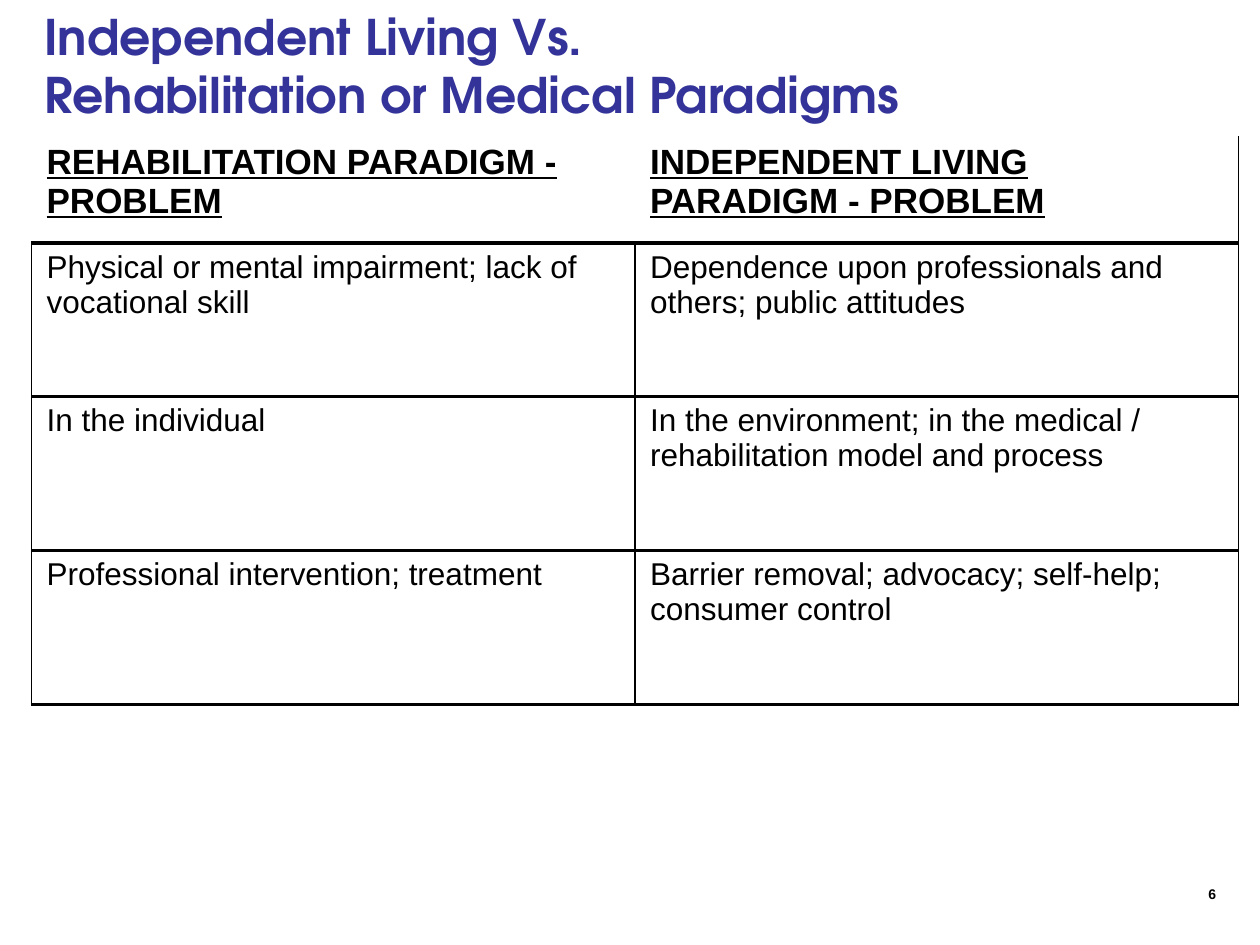
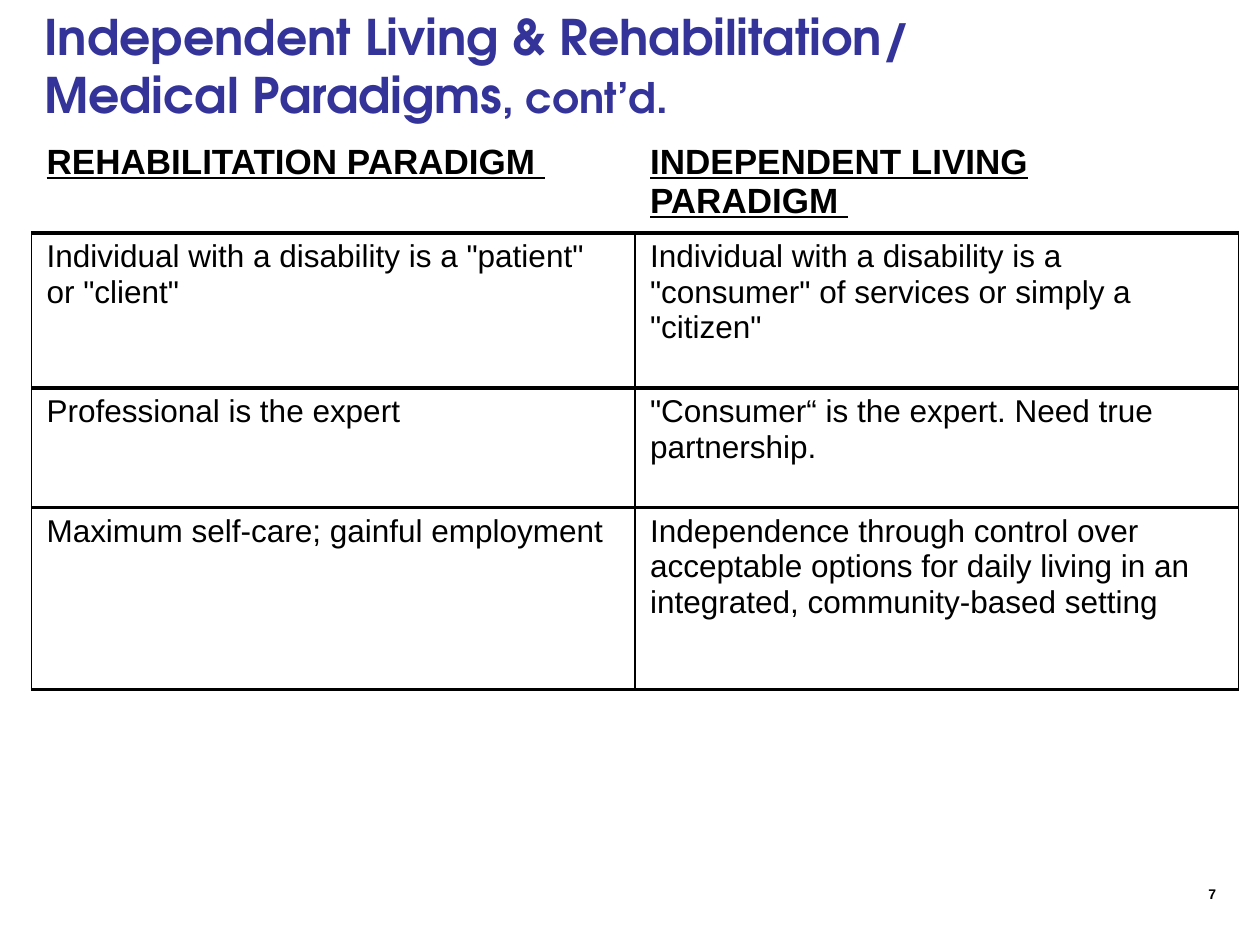
from lxml import etree
from pptx import Presentation, util as u
from pptx.dml.color import RGBColor
from pptx.enum import text
from pptx.oxml.ns import qn

# Content: title runs as (text, theme size), then header row and body rows
SLIDES = [
    dict(number="6",
         title=[("Independent Living Vs. \vRehabilitation or Medical Paradigms", "title")],
         heights=[0.85, 1.22, 1.22, 1.22], header_right=True,
         rows=[("REHABILITATION PARADIGM - PROBLEM", "INDEPENDENT LIVING PARADIGM - PROBLEM"),
               ("Physical or mental impairment; lack of vocational skill",
                "Dependence upon professionals and others; public attitudes"),
               ("In the individual",
                "In the environment; in the medical / rehabilitation model and process"),
               ("Professional intervention; treatment",
                "Barrier removal; advocacy; self-help; consumer control")]),
    dict(number="7",
         title=[("Independent Living & Rehabilitation/ Medical Paradigms", "title"),
                (", cont’d.", "subtitle")],
         heights=[0.77, 1.23, 0.95, 1.44], header_right=False,
         rows=[("REHABILITATION PARADIGM ", "INDEPENDENT LIVING PARADIGM "),
               ('Individual with a disability is a "patient" or "client"',
                'Individual with a disability is a "consumer" of services or simply a "citizen"'),
               ("Professional is the expert",
                '"Consumer“ is the expert. Need true partnership.'),
               ("Maximum self-care; gainful employment",
                "Independence through control over acceptable options for daily living "
                "in an integrated, community-based setting")]),
]

# Theme: one font format per text role, and line widths in points
BLUE, BLACK = RGBColor(0x33, 0x33, 0x99), RGBColor(0, 0, 0)


def style(size, bold, color=BLACK, name="Arial", underline=False):
    return dict(size=u.Pt(size), bold=bold, name=name, underline=underline, color=color)


THEME = dict(
    title=style(28, True, BLUE, "TeX Gyre Adventor"),
    subtitle=style(24, True, BLUE, "TeX Gyre Adventor"),
    header=style(20, True, underline=True),
    body=style(18, False),
    number=style(8, True),
)
THIN, RULE, HEADER_RULE = 0.75, 2, 2.25

# Layout in inches
WIDTH, HEIGHT = 10, 7.5
LEFT = 0.25
TITLE_BOX = (LEFT, 0.08, 8.42, 0.87)
TABLE_TOP, TABLE_WIDTH = 1.08, 9.58
NUMBER_BOX = (9.08, 6.98, 0.67, 0.27)
CELL_FORMAT = dict(margin_left=u.Inches(0.12), margin_right=u.Inches(0.12),
                   margin_top=u.Inches(0.05), margin_bottom=u.Inches(0.05))
NO_TABLE_STYLE = "{2D5ABB26-0587-4C30-8999-92F81FD0307C}"


def apply(target, values):
    for name, value in values.items():
        setattr(target, name, value)


def add_run(p, words, role):
    values = dict(THEME[role])
    for i, line in enumerate(words.split("\v")):
        if i:
            p.add_line_break()
        r = p.add_run()
        r.text = line
        r.font.color.rgb = values["color"]
        apply(r.font, {k: v for k, v in values.items() if k != "color"})


def add_border(cell, side, width):
    ln = etree.SubElement(cell._tc.get_or_add_tcPr(), qn("a:ln" + side), w=str(u.Pt(width)))
    if width:
        fill = etree.SubElement(ln, qn("a:solidFill"))
        etree.SubElement(fill, qn("a:srgbClr"), val=str(BLACK))
    else:
        etree.SubElement(ln, qn("a:noFill"))


def cell_borders(row, col, header_right):
    if row == 0:
        return dict(L=0, R=THIN if header_right and col == 1 else 0, T=0, B=HEADER_RULE)
    return dict(L=THIN, R=THIN, T=HEADER_RULE if row == 1 else RULE, B=RULE)


def add_title(s, runs):
    title = s.shapes.title
    apply(title, dict(zip(("left", "top", "width", "height"), map(u.Inches, TITLE_BOX))))
    tf = title.text_frame
    apply(tf, dict(word_wrap=True, vertical_anchor=text.MSO_ANCHOR.MIDDLE,
                   auto_size=text.MSO_AUTO_SIZE.NONE))
    p = tf.paragraphs[0]
    p.alignment = text.PP_ALIGN.LEFT
    for words, role in runs:
        add_run(p, words, role)


def add_paradigm_table(s, rows, heights, header_right):
    cols = len(rows[0])
    box = map(u.Inches, (LEFT, TABLE_TOP, TABLE_WIDTH, sum(heights)))
    table = s.shapes.add_table(len(rows), cols, *box).table
    table._tbl.tblPr.find(qn("a:tableStyleId")).text = NO_TABLE_STYLE
    table.horz_banding = False
    for column in table.columns:
        column.width = u.Inches(TABLE_WIDTH / cols)
    for i, (cells, height) in enumerate(zip(rows, heights)):
        table.rows[i].height = u.Inches(height)
        for j, words in enumerate(cells):
            cell = table.cell(i, j)
            apply(cell, CELL_FORMAT)
            for side, width in cell_borders(i, j, header_right).items():
                add_border(cell, side, width)
            cell.fill.background()
            add_run(cell.text_frame.paragraphs[0], words, "body" if i else "header")


def add_number(s, number):
    tf = s.shapes.add_textbox(*map(u.Inches, NUMBER_BOX)).text_frame
    tf.word_wrap = True
    p = tf.paragraphs[0]
    p.alignment = text.PP_ALIGN.RIGHT
    add_run(p, number, "number")


def main():
    prs = Presentation()
    prs.slide_width, prs.slide_height = u.Inches(WIDTH), u.Inches(HEIGHT)
    for content in SLIDES:
        s = prs.slides.add_slide(prs.slide_layouts[5])
        add_number(s, content["number"])
        add_title(s, content["title"])
        add_paradigm_table(s, content["rows"], content["heights"], content["header_right"])
    prs.save("out.pptx")


if __name__ == "__main__":
    main()
